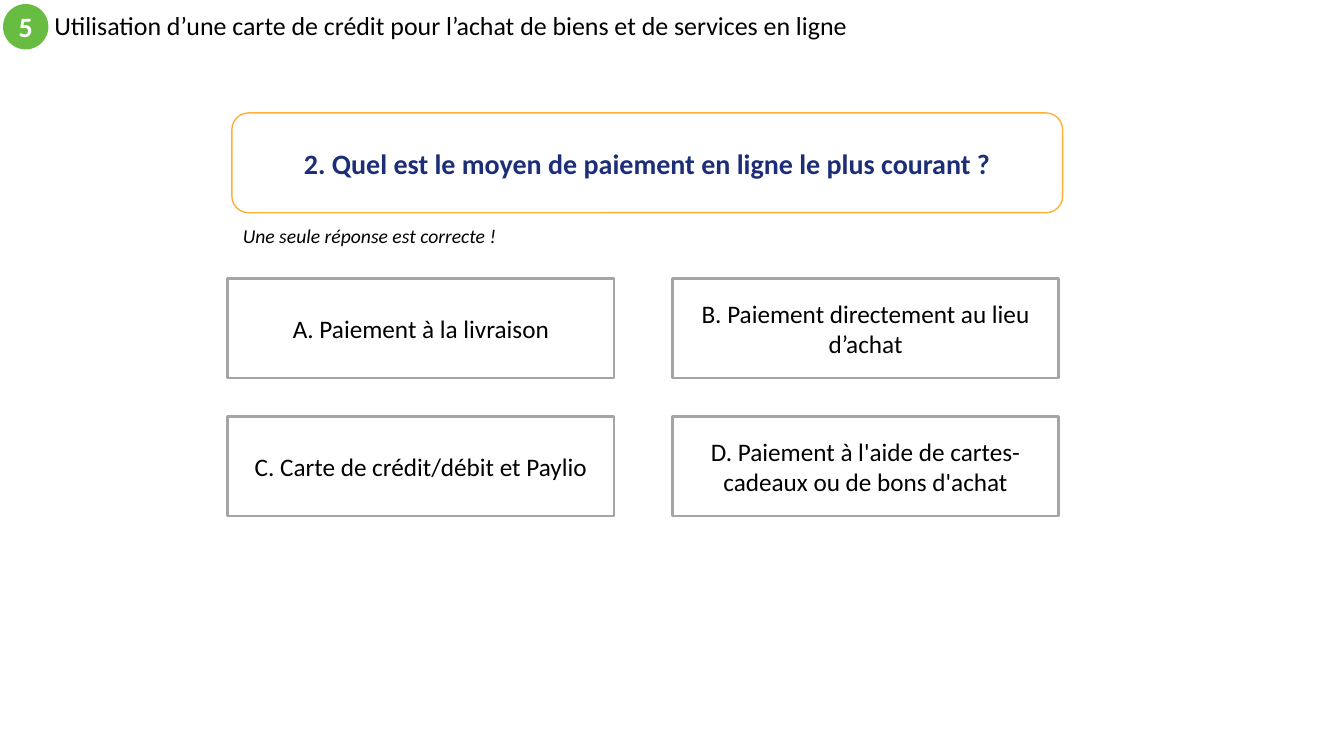
from pptx import Presentation, util as u
from pptx.dml.color import RGBColor
from pptx.enum import shapes, text

EMU_PER_PX = 9144  # 100 px to the inch
FONT = "Calibri"
BLACK = RGBColor(0x00, 0x00, 0x00)
WHITE = RGBColor(0xFF, 0xFF, 0xFF)
GREEN = RGBColor(0x68, 0xBC, 0x42)
ORANGE = RGBColor(0xFC, 0xB1, 0x3A)
NAVY = RGBColor(0x1C, 0x2E, 0x78)
GREY = RGBColor(0xA5, 0xA5, 0xA5)

ANSWERS = [
    "A. Paiement à la livraison",
    "B. Paiement directement au lieu d’achat",
    "C. Carte de crédit/débit et Paylio",
    "D. Paiement à l'aide de cartes-cadeaux ou de bons d'achat",
]
ANSWER_LEFT, ANSWER_TOP = 226, 276
ANSWER_WIDTH, ANSWER_HEIGHT = 383, 99
COLUMN_STEP, ROW_STEP = 441, 137


def px(n):
    return u.Emu(n * EMU_PER_PX)


def write(sp, words, size, color=BLACK, bold=False, italic=False,
          align=text.PP_ALIGN.CENTER, anchor=text.MSO_ANCHOR.MIDDLE):
    """Fill the shape with one wrapped paragraph and return it."""
    tf = sp.text_frame
    tf.word_wrap = True
    tf.vertical_anchor = anchor
    p = tf.paragraphs[0]
    p.text = words
    p.alignment = align
    p.font.name = FONT
    p.font.size = u.Pt(size)
    p.font.bold = bold
    p.font.italic = italic
    p.font.color.rgb = color
    return p


def add_box(s, kind, box, fill, line=None, width=1):
    sp = s.shapes.add_shape(kind, *map(px, box))
    sp.shadow.inherit = False
    sp.fill.solid()
    sp.fill.fore_color.rgb = fill
    if line is None:
        sp.line.fill.background()
    else:
        sp.line.color.rgb = line
        sp.line.width = u.Pt(width)
    return sp


def add_label(s, box, words, size, **style):
    sp = s.shapes.add_textbox(*map(px, box))
    return write(sp, words, size, align=text.PP_ALIGN.LEFT, **style)


def add_header(s):
    badge = add_box(s, shapes.MSO_SHAPE.OVAL, (3, 4, 45, 45), GREEN)
    write(badge, "5", 20, WHITE, bold=True)
    badge.text_frame.word_wrap = False
    title = add_label(
        s, (44, 4, 858, 45),
        "Utilisation d’une carte de crédit pour l’achat de biens et de services en ligne",
        18.5)
    title.line_spacing = 0.9


def add_question(s):
    sp = add_box(s, shapes.MSO_SHAPE.ROUNDED_RECTANGLE, (230, 112, 824, 99), WHITE, ORANGE)
    write(sp, "2. Quel est le moyen de paiement en ligne le plus courant ?", 20, NAVY, bold=True)
    add_label(s, (231, 217, 280, 34), "Une seule réponse est correcte !", 14,
              italic=True, anchor=text.MSO_ANCHOR.TOP)


def add_answers(s):
    for i, answer in enumerate(ANSWERS):
        row, column = divmod(i, 2)
        box = (ANSWER_LEFT + column * COLUMN_STEP, ANSWER_TOP + row * ROW_STEP,
               ANSWER_WIDTH, ANSWER_HEIGHT)
        sp = add_box(s, shapes.MSO_SHAPE.RECTANGLE, box, WHITE, GREY, 2)
        write(sp, answer, 18)


def main():
    prs = Presentation()
    prs.slide_width, prs.slide_height = px(1333), px(750)
    s = prs.slides.add_slide(prs.slide_layouts[6])
    add_header(s)
    add_question(s)
    add_answers(s)
    prs.save("out.pptx")


if __name__ == "__main__":
    main()
